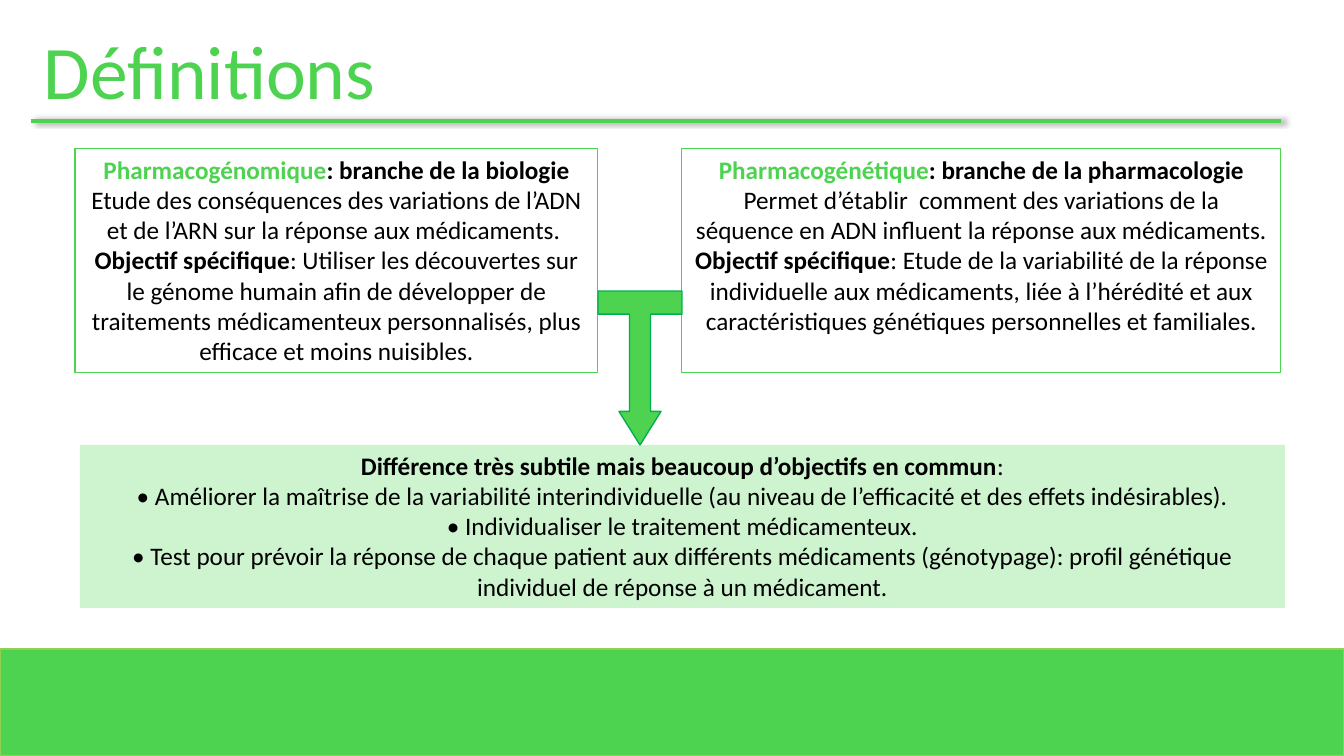
from lxml import etree
from pptx import Presentation
from pptx.dml.color import RGBColor
from pptx.enum.shapes import MSO_CONNECTOR, MSO_SHAPE
from pptx.enum.text import MSO_ANCHOR, MSO_AUTO_SIZE, PP_ALIGN
from pptx.oxml import parse_xml
from pptx.oxml.ns import nsdecls, qn
from pptx.util import Pt

RECT, CALLOUT = MSO_SHAPE.RECTANGLE, MSO_SHAPE.RIGHT_ARROW_CALLOUT
STRAIGHT, CENTER, TOP = MSO_CONNECTOR.STRAIGHT, PP_ALIGN.CENTER, MSO_ANCHOR.TOP
NO_FIT = MSO_AUTO_SIZE.NONE
FONT, GREEN, BLACK = "Calibri", "4DD350", "000000"
BAND_LINE, ARROW_LINE = "92D050", "00B050"

# Content: paragraphs of (text, bold, colour) runs
TITLE = "Définitions"
GENOMICS = [
    [("Pharmacogénomique", True, GREEN), (": branche de la biologie", True, BLACK)],
    [("Etude des conséquences des variations de l’ADN et de l’ARN sur la réponse "
      "aux médicaments. ", False, BLACK)],
    [("Objectif spécifique", True, BLACK),
     (": Utiliser les découvertes sur le génome humain afin de développer de traitements "
      "médicamenteux personnalisés, plus efficace et moins nuisibles.", False, BLACK)],
]
GENETICS = [
    [("Pharmacogénétique", True, GREEN), (": branche de la pharmacologie", True, BLACK)],
    [("Permet d’établir  comment des variations de la séquence en ADN influent la réponse "
      "aux médicaments.", False, BLACK)],
    [("Objectif spécifique", True, BLACK),
     (": Etude de la variabilité de la réponse individuelle aux médicaments, liée à "
      "l’hérédité et aux caractéristiques génétiques personnelles et familiales.",
      False, BLACK)],
]
COMMON = [
    [("Différence très subtile mais beaucoup d’objectifs en commun", True, BLACK),
     (":", False, BLACK)],
    [("• Améliorer la maîtrise de la variabilité interindividuelle (au niveau de "
      "l’efficacité et des effets indésirables).", False, BLACK)],
    [("• Individualiser le traitement médicamenteux.", False, BLACK)],
    [("• Test pour prévoir la réponse de chaque patient aux différents médicaments "
      "(génotypage): profil génétique individuel de réponse à un médicament.", False, BLACK)],
]

# Layout in px: left, top, width, height
SCALE = 914400 / 100.8
W, H = 1344, 756
BAND_TOP = 649
TITLE_BOX = (31, 19, 357, 102)
RULE = (31, 121, 1281, 121)
LEFT_BOX = (75, 149, 523, 224)
RIGHT_BOX = (682, 149, 599, 224)
COMMON_BOX = (80, 445, 1205, 163)
ARROW_TOP = 291


def px(*values):
    return [round(v * SCALE) for v in values]


def rgb(value):
    return RGBColor.from_string(value)


def write(tf, paragraphs, size):
    for i, runs in enumerate(paragraphs):
        p = tf.paragraphs[0] if i == 0 else tf.add_paragraph()
        p.alignment = CENTER
        for text, bold, colour in runs:
            r = p.add_run()
            r.text = text
            for name, value in {"name": FONT, "size": Pt(size), "bold": bold}.items():
                setattr(r.font, name, value)
            r.font.color.rgb = rgb(colour)


def add_box(kind, box, fill=None, line=None, weight=1, alpha=None, paragraphs=()):
    s = shapes.add_shape(kind, *px(*box))
    s.shadow.inherit = False
    if fill:
        s.fill.solid()
        s.fill.fore_color.rgb = rgb(fill)
        if alpha:
            colour = s.fill._xPr.find(".//" + qn("a:srgbClr"))
            etree.SubElement(colour, qn("a:alpha")).set("val", str(alpha * 1000))
    else:
        s.fill.background()
    if line:
        s.line.color.rgb = rgb(line)
        s.line.width = Pt(weight)
    else:
        s.line.fill.background()
    s.text_frame.word_wrap = True
    s.text_frame.vertical_anchor = TOP
    write(s.text_frame, paragraphs, 18)
    return s


prs = Presentation()
prs.slide_width, prs.slide_height = px(W, H)
slide = prs.slides.add_slide(prs.slide_layouts[5])
shapes = slide.shapes

# Title
title = shapes.title
title.left, title.top, title.width, title.height = px(*TITLE_BOX)
tf = title.text_frame
for name, value in {"word_wrap": False, "auto_size": NO_FIT, "vertical_anchor": TOP}.items():
    setattr(tf, name, value)
write(tf, [[(TITLE, False, GREEN)]], 54)

# Rule under the title, with a soft shadow to the right
rule = shapes.add_connector(STRAIGHT, *px(*RULE))
rule.line.color.rgb = rgb(GREEN)
rule.line.width = Pt(3)
rule._element.spPr.append(parse_xml(
    f'<a:effectLst {nsdecls("a")}><a:outerShdw blurRad="{Pt(4)}" dist="{Pt(3)}" dir="0">'
    f'<a:srgbClr val="{BLACK}"><a:alpha val="40000"/></a:srgbClr>'
    '</a:outerShdw></a:effectLst>'))

# Bottom band
add_box(RECT, (0, BAND_TOP, W, H - BAND_TOP), fill=GREEN, line=BAND_LINE)

# Definitions and their common aims
for box, paragraphs in ((LEFT_BOX, GENOMICS), (RIGHT_BOX, GENETICS)):
    add_box(RECT, box, line=GREEN, weight=0.75, paragraphs=paragraphs)
add_box(RECT, COMMON_BOX, fill=GREEN, alpha=27, paragraphs=COMMON)

# Arrow filling the gap between the definitions, turned to point down
gap_left = LEFT_BOX[0] + LEFT_BOX[2]
gap = RIGHT_BOX[0] - gap_left
length = COMMON_BOX[1] - ARROW_TOP
arrow = add_box(CALLOUT, (gap_left + (gap - length) / 2, ARROW_TOP + (length - gap) / 2,
                          length, gap), fill=GREEN, line=ARROW_LINE)
arrow.rotation = 90
for i, value in enumerate((0.25, 0.25, 0.4, 0.15)):
    arrow.adjustments[i] = value

prs.save("out.pptx")
